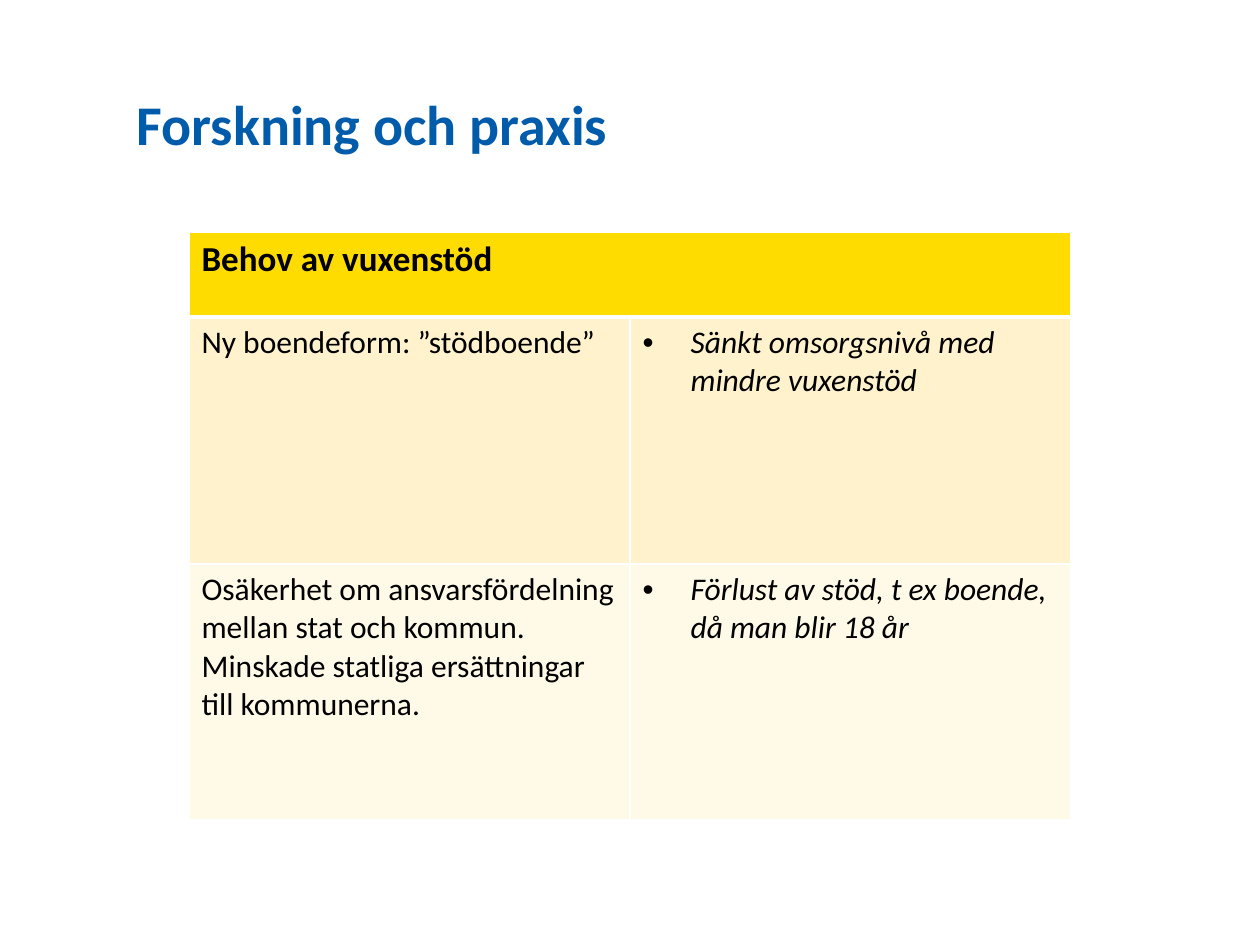
from lxml.etree import SubElement
from pptx import Presentation
from pptx.dml.color import RGBColor
from pptx.enum.text import MSO_ANCHOR, PP_ALIGN
from pptx.oxml import parse_xml
from pptx.oxml.ns import nsdecls, qn
from pptx.util import Pt

PX = 914400 / 126
COLORS = {
    "title": "005CAA",
    "text": "000000",
    "border": "FFFFFF",
    "header": "FFDC00",
    "band_dark": "FFF2CC",
    "band_light": "FFF9E7",
}


def px(length):
    return round(length * PX)


def add_borders(cell, widths):
    """Give a cell solid borders; widths maps L, R, T, B to points."""
    for index, (side, width) in enumerate(widths.items()):
        cell._tc.get_or_add_tcPr().insert(index, parse_xml(
            f'<a:ln{side} {nsdecls("a")} w="{Pt(width)}"><a:solidFill>'
            f'<a:srgbClr val="{COLORS["border"]}"/></a:solidFill></a:ln{side}>'))


prs = Presentation()
prs.slide_width, prs.slide_height = px(1260), px(945)
slide = prs.slides.add_slide(prs.slide_layouts[5])

title = slide.shapes.title
title.left, title.top, title.width, title.height = px(124), px(83), px(1012), px(149)
title.text_frame.text = "Forskning och praxis"
title.text_frame.vertical_anchor = MSO_ANCHOR.TOP
heading = title.text_frame.paragraphs[0]
heading.alignment = PP_ALIGN.LEFT
heading.font.name = "Calibri"
heading.font.size = Pt(32)
heading.font.bold = True
heading.font.color.rgb = RGBColor.from_string(COLORS["title"])

rows = [
    ("header", 85, ["Behov av vuxenstöd", ""]),
    ("band_dark", 247, ["Ny boendeform: ”stödboende”",
                        "Sänkt omsorgsnivå med mindre vuxenstöd"]),
    ("band_light", 256, ["Osäkerhet om ansvarsfördelning mellan stat och kommun. "
                         "Minskade statliga ersättningar till kommunerna.",
                         "Förlust av stöd, t ex boende, då man blir 18 år"]),
]
table_height = sum(height for _, height, _ in rows)
needs = slide.shapes.add_table(len(rows), 2, px(189), px(232), px(882), px(table_height)).table
needs.cell(0, 0).merge(needs.cell(0, 1))
for column in needs.columns:
    column.width = px(441)

for r, (band, height, texts) in enumerate(rows):
    needs.rows[r].height = px(height)
    for c, text in enumerate(texts):
        cell = needs.cell(r, c)
        cell.fill.solid()
        cell.fill.fore_color.rgb = RGBColor.from_string(COLORS[band])
        add_borders(cell, {"L": 1, "R": 1, "T": 3 if r == 1 else 1, "B": 3 if r == 0 else 1})
        if not text:
            continue
        cell.text = text
        paragraph = cell.text_frame.paragraphs[0]
        is_consequence = c == 1
        if is_consequence:
            properties = paragraph._p.get_or_add_pPr()
            properties.set("marL", str(px(48)))
            properties.set("indent", str(-px(48)))
            SubElement(properties, qn("a:buFont"), typeface="Arial")
            SubElement(properties, qn("a:buChar"), char="•")
        paragraph.font.name = "Calibri"
        paragraph.font.size = Pt(20 if r == 0 else 18)
        paragraph.font.bold = r == 0
        paragraph.font.italic = is_consequence
        paragraph.font.color.rgb = RGBColor.from_string(COLORS["text"])

prs.save("out.pptx")
